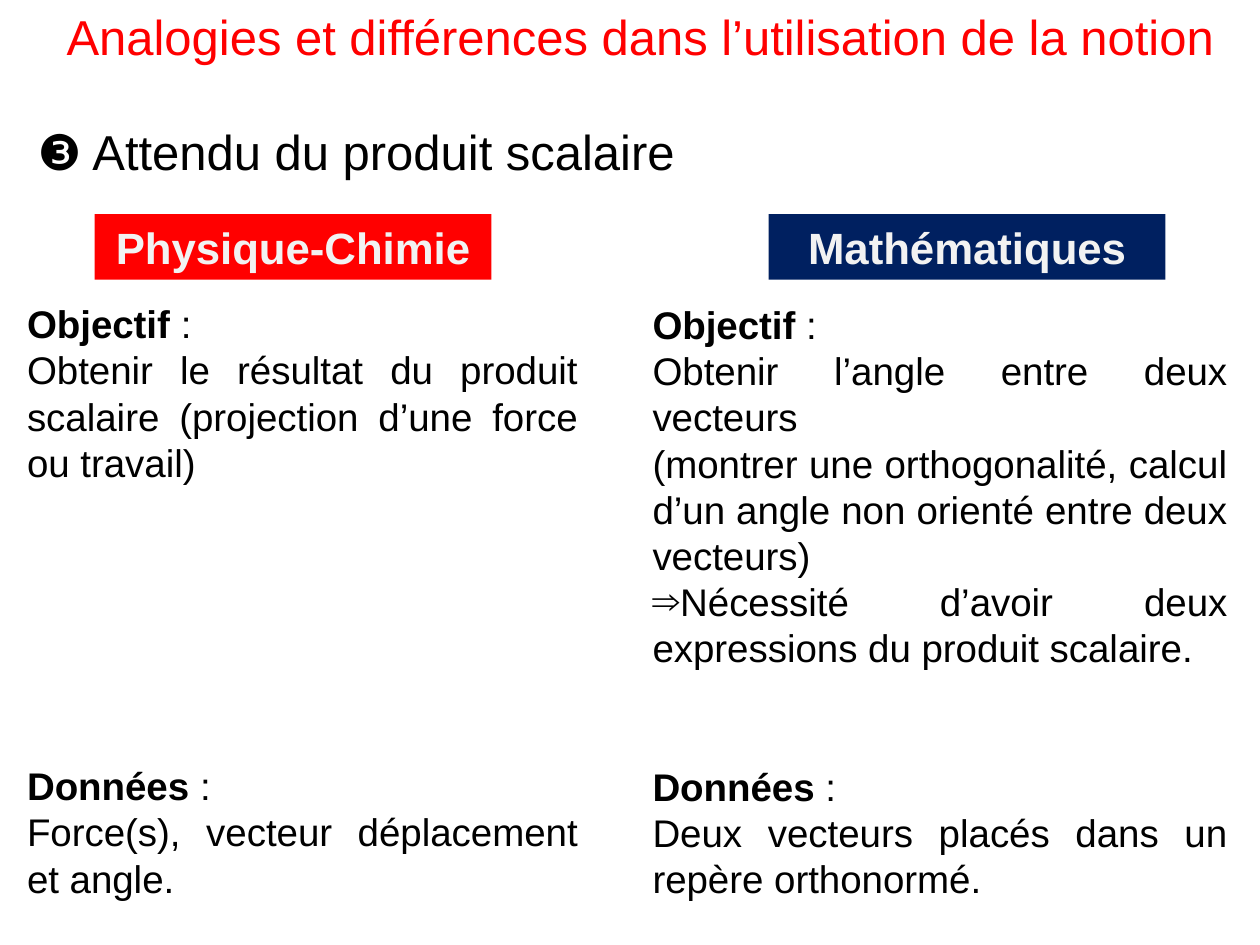
from dataclasses import dataclass

from lxml import etree
from pptx import Presentation
from pptx.dml.color import RGBColor
from pptx.enum.shapes import MSO_SHAPE
from pptx.enum.text import MSO_ANCHOR, PP_ALIGN
from pptx.oxml.ns import qn
from pptx.util import Pt

RECT = MSO_SHAPE.RECTANGLE
TOP, MIDDLE = MSO_ANCHOR.TOP, MSO_ANCHOR.MIDDLE
LEFT, CENTER, JUST = PP_ALIGN.LEFT, PP_ALIGN.CENTER, PP_ALIGN.JUSTIFY


@dataclass(frozen=True)
class Theme:
    font: str = "Arial"
    red: str = "FF0000"
    navy: str = "002060"
    black: str = "000000"
    pale: str = "F2F2F2"
    head: int = 28
    label: int = 25
    body: int = 22
    lead: float = 1.2


THEME = Theme()


def write(frame, text, size=THEME.body, color=THEME.black, bold=False,
          align=JUST, lead="", gap=0, mark=None, first=False):
    para = frame.paragraphs[0] if first else frame.add_paragraph()
    para.alignment = align
    para.line_spacing = Pt(size * THEME.lead)
    para.space_before = Pt(gap)
    if mark:
        props = para._p.get_or_add_pPr()
        etree.SubElement(props, qn("a:buFont")).set("typeface", THEME.font)
        etree.SubElement(props, qn("a:buChar")).set("char", mark)
    for part, heavy in ((lead, True), (text, bold)):
        if part:
            run = para.add_run()
            run.text = part
            run.font.name = THEME.font
            run.font.size = Pt(size)
            run.font.bold = heavy
            run.font.color.rgb = RGBColor.from_string(color)


def panel(slide, box, fill=None):
    area = [Pt(side) for side in box]
    if fill:
        shape = slide.shapes.add_shape(RECT, *area)
        shape.shadow.inherit = False
        shape.fill.solid()
        shape.fill.fore_color.rgb = RGBColor.from_string(fill)
        shape.line.fill.background()
    else:
        shape = slide.shapes.add_textbox(*area)
    frame = shape.text_frame
    frame.word_wrap = True
    frame.vertical_anchor = MIDDLE if fill else TOP
    return frame


def heading(slide, box, text, color, align):
    write(panel(slide, box), text, size=THEME.head, color=color,
          align=align, first=True)


def label(slide, box, text, fill):
    write(panel(slide, box, fill), text, size=THEME.label,
          color=THEME.pale, bold=True, align=CENTER, first=True)


def column(slide, box, goals, data, skip, mark=None, align=JUST):
    frame = panel(slide, box)
    write(frame, " :", lead="Objectif", align=align, first=True)
    for goal in goals:
        write(frame, goal)
    if mark:
        write(frame, mark, mark="⇒")
    write(frame, " :", lead="Données", gap=skip * THEME.body * THEME.lead)
    write(frame, data)


def main():
    deck = Presentation()
    deck.slide_width, deck.slide_height = Pt(720), Pt(540)
    slide = deck.slides.add_slide(deck.slide_layouts[6])

    heading(slide, (11.5, 0, 708.5, 41),
            "Analogies et différences dans l’utilisation de la notion",
            THEME.red, CENTER)
    heading(slide, (14.4, 66.2, 527, 41),
            "❸ Attendu du produit scalaire", THEME.black, JUST)

    label(slide, (54, 122.4, 226.8, 37.4), "Physique-Chimie", THEME.red)
    label(slide, (439.2, 122.4, 226.8, 37.4), "Mathématiques", THEME.navy)

    column(slide, (8.4, 168, 329, 353.5),
           ["Obtenir le résultat du produit scalaire "
            "(projection d’une force ou travail)"],
           "Force(s), vecteur déplacement et angle.", skip=6)
    column(slide, (365.8, 168.5, 342.7, 353.5),
           ["Obtenir l’angle entre deux vecteurs",
            "(montrer une orthogonalité, calcul d’un angle non orienté "
            "entre deux vecteurs)"],
           "Deux vecteurs placés dans un repère orthonormé.", skip=2,
           mark="Nécessité d’avoir deux expressions du produit scalaire.",
           align=LEFT)

    deck.save("out.pptx")


if __name__ == "__main__":
    main()
